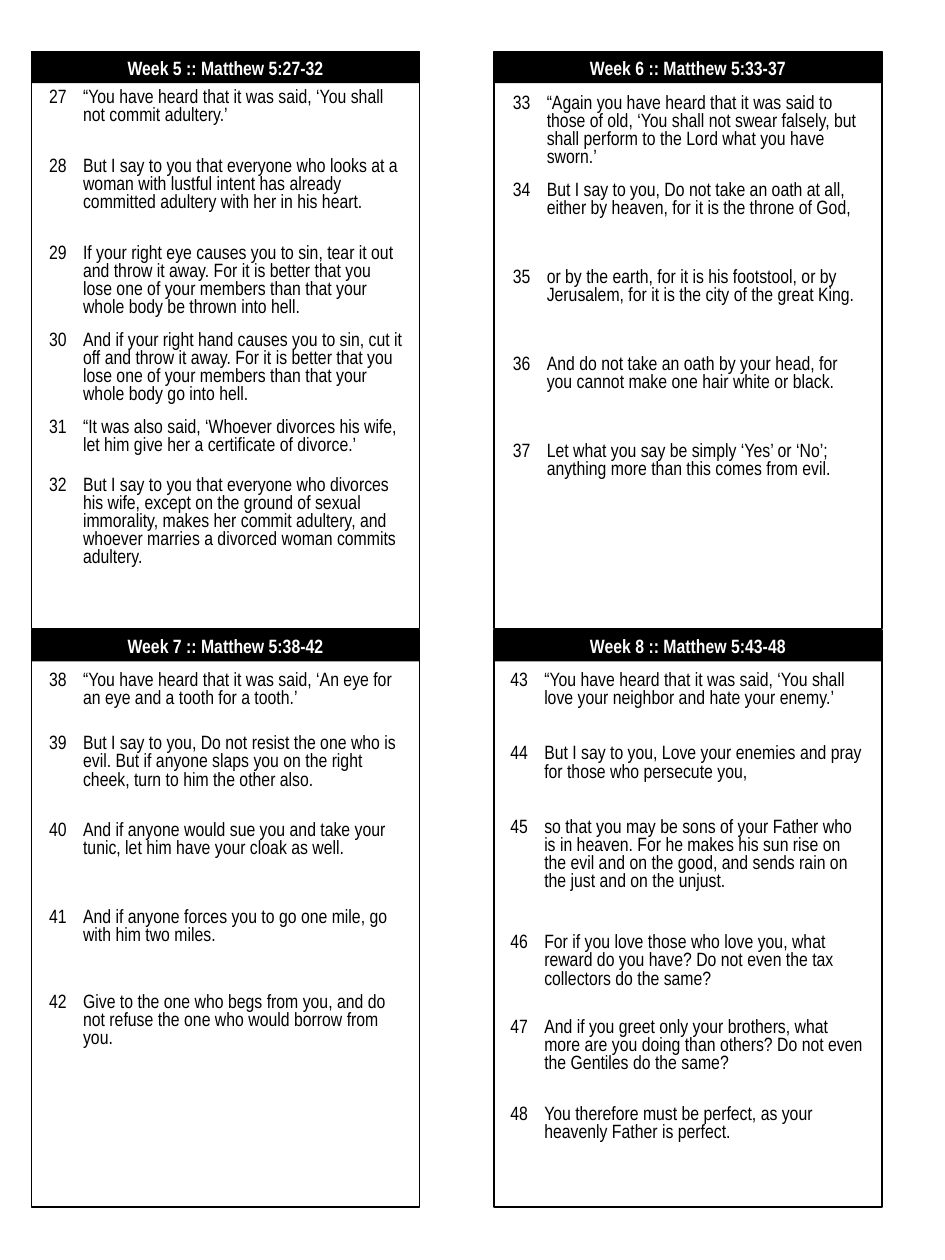
from pptx import Presentation
from pptx.dml.color import RGBColor
from pptx.enum.shapes import MSO_SHAPE
from pptx.enum.text import MSO_ANCHOR, PP_ALIGN
from pptx.util import Inches, Pt

RECTANGLE = MSO_SHAPE.RECTANGLE
MIDDLE, TOP = MSO_ANCHOR.MIDDLE, MSO_ANCHOR.TOP
CENTER, LEFT = PP_ALIGN.CENTER, PP_ALIGN.LEFT
BLACK = RGBColor(0x00, 0x00, 0x00)
WHITE = RGBColor(0xFF, 0xFF, 0xFF)
FONT = "Arial Narrow"

# Two by two grid of panels, in inches
GRID_LEFT, GRID_TOP = 0.25, 0.41
COLUMN_STEP, ROW_STEP = 3.67, 4.59
PANEL_WIDTH, PANEL_HEIGHT = 3.08, 4.58
HEADING_HEIGHT = 0.25
VERSE_COLUMNS = (0.27, 2.57)

# Heading, first verse number, table offset in its panel, (row height, verse)
WEEKS = [
    ("Week 5 :: Matthew 5:27-32", 27, (0.13, 0.29), [
        (0.55, "“You have heard that it was said, ‘You shall not commit adultery.’"),
        (0.69, "But I say to you that everyone who looks at a woman with lustful "
               "intent has already committed adultery with her in his heart."),
        (0.69, "If your right eye causes you to sin, tear it out and throw it away. "
               "For it is better that you lose one of your members than that your "
               "whole body be thrown into hell."),
        (0.69, "And if your right hand causes you to sin, cut it off and throw it "
               "away. For it is better that you lose one of your members than that "
               "your whole body go into hell."),
        (0.46, "“It was also said, ‘Whoever divorces his wife, let him give her a "
               "certificate of divorce.’"),
        (0.92, "But I say to you that everyone who divorces his wife, except on the "
               "ground of sexual immorality, makes her commit adultery, and whoever "
               "marries a divorced woman commits adultery."),
    ]),
    ("Week 6 :: Matthew 5:33-37", 33, (0.14, 0.34), [
        (0.69, "“Again you have heard that it was said to those of old, ‘You shall "
               "not swear falsely, but shall perform to the Lord what you have sworn.’"),
        (0.69, "But I say to you, Do not take an oath at all, either by heaven, for "
               "it is the throne of God,"),
        (0.69, "or by the earth, for it is his footstool, or by Jerusalem, for it is "
               "the city of the great King."),
        (0.69, "And do not take an oath by your head, for you cannot make one hair "
               "white or black."),
        (0.46, "Let what you say be simply ‘Yes’ or ‘No’; anything more than this "
               "comes from evil."),
    ]),
    ("Week 7 :: Matthew 5:38-42", 38, (0.13, 0.33), [
        (0.50, "“You have heard that it was said, ‘An eye for an eye and a tooth for "
               "a tooth.’"),
        (0.69, "But I say to you, Do not resist the one who is evil. But if anyone "
               "slaps you on the right cheek, turn to him the other also."),
        (0.69, "And if anyone would sue you and take your tunic, let him have your "
               "cloak as well."),
        (0.67, "And if anyone forces you to go one mile, go with him two miles."),
        (0.69, "Give to the one who begs from you, and do not refuse the one who "
               "would borrow from you."),
    ]),
    ("Week 8 :: Matthew 5:43-48", 43, (0.12, 0.33), [
        (0.58, "“You have heard that it was said, ‘You shall love your neighbor and "
               "hate your enemy.’"),
        (0.58, "But I say to you, Love your enemies and pray for those who persecute "
               "you,"),
        (0.92, "so that you may be sons of your Father who is in heaven. For he makes "
               "his sun rise on the evil and on the good, and sends rain on the just "
               "and on the unjust."),
        (0.67, "For if you love those who love you, what reward do you have? Do not "
               "even the tax collectors do the same?"),
        (0.69, "And if you greet only your brothers, what more are you doing than "
               "others? Do not even the Gentiles do the same?"),
        (0.46, "You therefore must be perfect, as your heavenly Father is perfect."),
    ]),
]


def write(frame, text, color, align, bold=False):
    para = frame.paragraphs[0]
    para.alignment = align
    span = para.add_run()
    span.text = text
    span.font.name = FONT
    span.font.size = Pt(11)
    span.font.bold = bold
    span.font.color.rgb = color


def add_rectangle(page, left, top, width, height):
    box = page.shapes.add_shape(RECTANGLE, Inches(left), Inches(top),
                                Inches(width), Inches(height))
    box.shadow.inherit = False
    return box


def add_frame(page, left, top):
    frame = add_rectangle(page, left, top, PANEL_WIDTH, PANEL_HEIGHT)
    frame.fill.background()
    frame.line.color.rgb = BLACK
    frame.line.width = Pt(0.75)


def add_heading(page, left, top, text):
    heading = add_rectangle(page, left, top, PANEL_WIDTH, HEADING_HEIGHT)
    heading.fill.solid()
    heading.fill.fore_color.rgb = BLACK
    heading.line.fill.background()
    heading.text_frame.vertical_anchor = MIDDLE
    write(heading.text_frame, text, WHITE, CENTER, bold=True)


def fill_cell(cell, text):
    cell.fill.background()
    cell.margin_left = cell.margin_right = cell.margin_top = Inches(0.01)
    cell.margin_bottom = 0
    cell.vertical_anchor = TOP
    write(cell.text_frame, text, BLACK, LEFT)


def add_verses(page, left, top, first, verses):
    height = sum(row_height for row_height, _ in verses)
    table = page.shapes.add_table(len(verses), len(VERSE_COLUMNS), Inches(left),
                                  Inches(top), Inches(sum(VERSE_COLUMNS)),
                                  Inches(height)).table
    table.first_row = table.horz_banding = False
    for column, width in zip(table.columns, VERSE_COLUMNS):
        column.width = Inches(width)
    for index, (row_height, verse) in enumerate(verses):
        table.rows[index].height = Inches(row_height)
        fill_cell(table.cell(index, 0), str(first + index))
        fill_cell(table.cell(index, 1), verse)


def add_panel(page, left, top, week):
    """Place one week: frame, heading bar and numbered verses."""
    heading, first, (offset_x, offset_y), verses = week
    add_frame(page, left, top)
    add_heading(page, left, top, heading)
    add_verses(page, left + offset_x, top + offset_y, first, verses)


def main():
    deck = Presentation()
    deck.slide_width, deck.slide_height = Inches(7.5), Inches(10)
    page = deck.slides.add_slide(deck.slide_layouts[6])
    for index, week in enumerate(WEEKS):
        row, column = divmod(index, 2)
        add_panel(page, GRID_LEFT + column * COLUMN_STEP,
                  GRID_TOP + row * ROW_STEP, week)
    deck.save("out.pptx")


if __name__ == "__main__":
    main()
